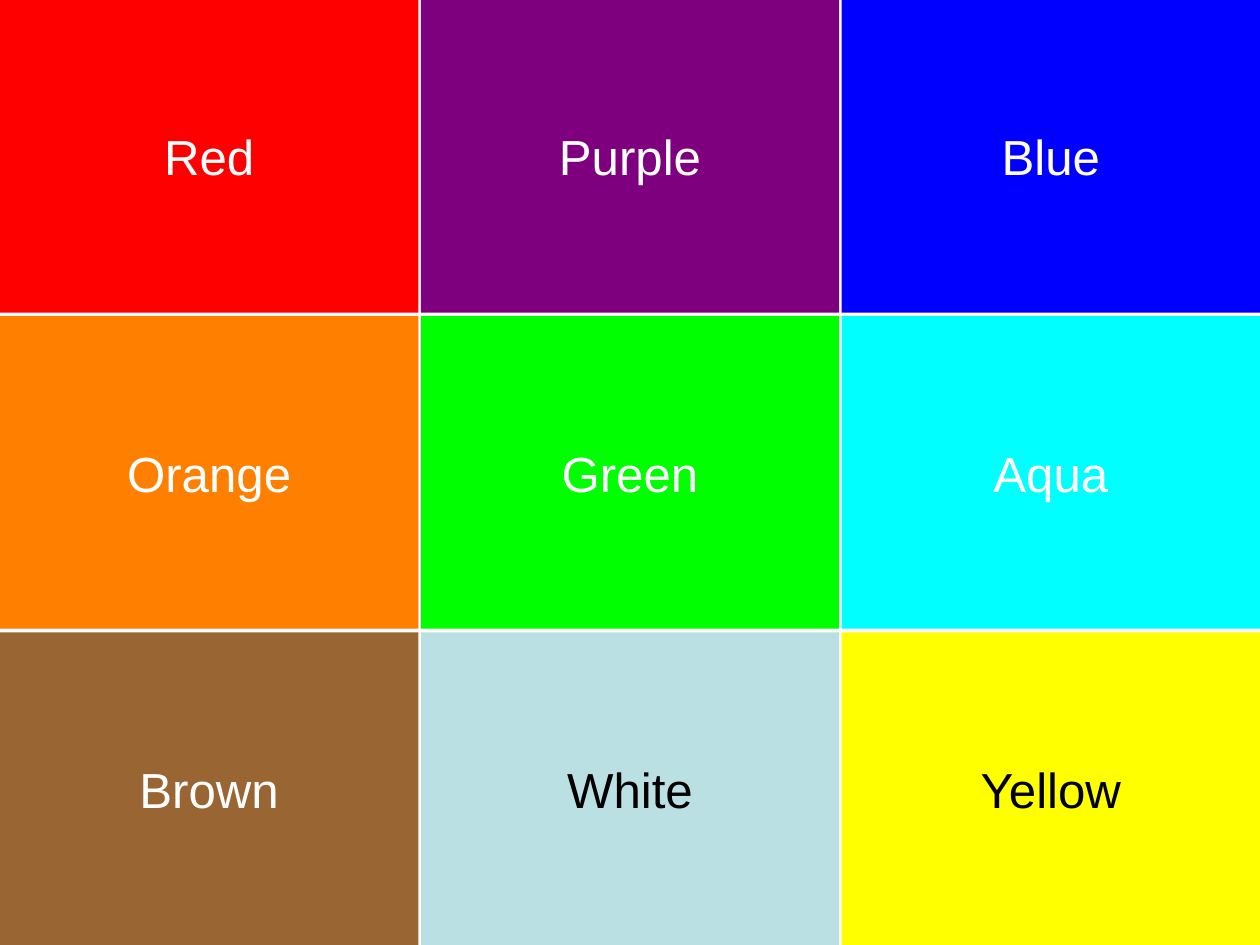
from dataclasses import dataclass

from pptx import Presentation
from pptx.dml.color import RGBColor as RGB
from pptx.enum.shapes import MSO_SHAPE as Preset
from pptx.enum.text import MSO_ANCHOR as Anchor, PP_ALIGN as Align
from pptx.util import Pt


@dataclass(frozen=True)
class Theme:
    font: str = "Arial"
    label_size: int = 40
    light: str = "FFFFFF"
    dark: str = "000000"


THEME = Theme()
SLIDE_W, SLIDE_H = 1024, 768
COLUMN_GAP, ROW_GAP = 2, 3

# Colour name, tile fill, label colour
COLOUR_ROWS = [
    [("Red", "FF0000", THEME.light),
     ("Purple", "7F007F", THEME.light),
     ("Blue", "0000FF", THEME.light)],
    [("Orange", "FF7F00", THEME.light),
     ("Green", "00FF00", THEME.light),
     ("Aqua", "00FFFF", THEME.light)],
    [("Brown", "996633", THEME.light),
     ("White", "BBE0E3", THEME.dark),
     ("Yellow", "FFFF00", THEME.dark)],
]


def add_tile(shapes, box, name, fill, label_colour):
    """Draw one filled tile with its centred colour name."""
    tile = shapes.add_shape(Preset.RECTANGLE, *map(Pt, box))
    tile.shadow.inherit = False
    tile.fill.solid()
    tile.fill.fore_color.rgb = RGB.from_string(fill)
    tile.line.fill.background()

    frame = tile.text_frame
    frame.word_wrap = True
    frame.vertical_anchor = Anchor.MIDDLE
    frame.margin_left = frame.margin_right = 0
    frame.margin_top = frame.margin_bottom = 0

    label = frame.paragraphs[0]
    label.alignment = Align.CENTER
    run = label.add_run()
    run.text = name
    run.font.name = THEME.font
    run.font.size = Pt(THEME.label_size)
    run.font.color.rgb = RGB.from_string(label_colour)


def add_colour_row(slide, box, colours):
    """Share the box equally among one row of grouped tiles."""
    left, top, width, height = box
    tile_w = (width - COLUMN_GAP * (len(colours) - 1)) / len(colours)
    row = slide.shapes.add_group_shape()
    for column, colour in enumerate(colours):
        tile_left = left + column * (tile_w + COLUMN_GAP)
        add_tile(row.shapes, (tile_left, top, tile_w, height), *colour)


def add_colour_grid(slide, box, rows):
    """Stack the colour rows evenly in the box."""
    left, top, width, height = box
    row_h = (height - ROW_GAP * (len(rows) - 1)) / len(rows)
    for index, colours in enumerate(rows):
        row_top = top + index * (row_h + ROW_GAP)
        add_colour_row(slide, (left, row_top, width, row_h), colours)


def main():
    deck = Presentation()
    deck.slide_width, deck.slide_height = Pt(SLIDE_W), Pt(SLIDE_H)
    slide = deck.slides.add_slide(deck.slide_layouts[6])
    add_colour_grid(slide, (0, 0, SLIDE_W, SLIDE_H), COLOUR_ROWS)
    deck.save("out.pptx")


if __name__ == "__main__":
    main()
